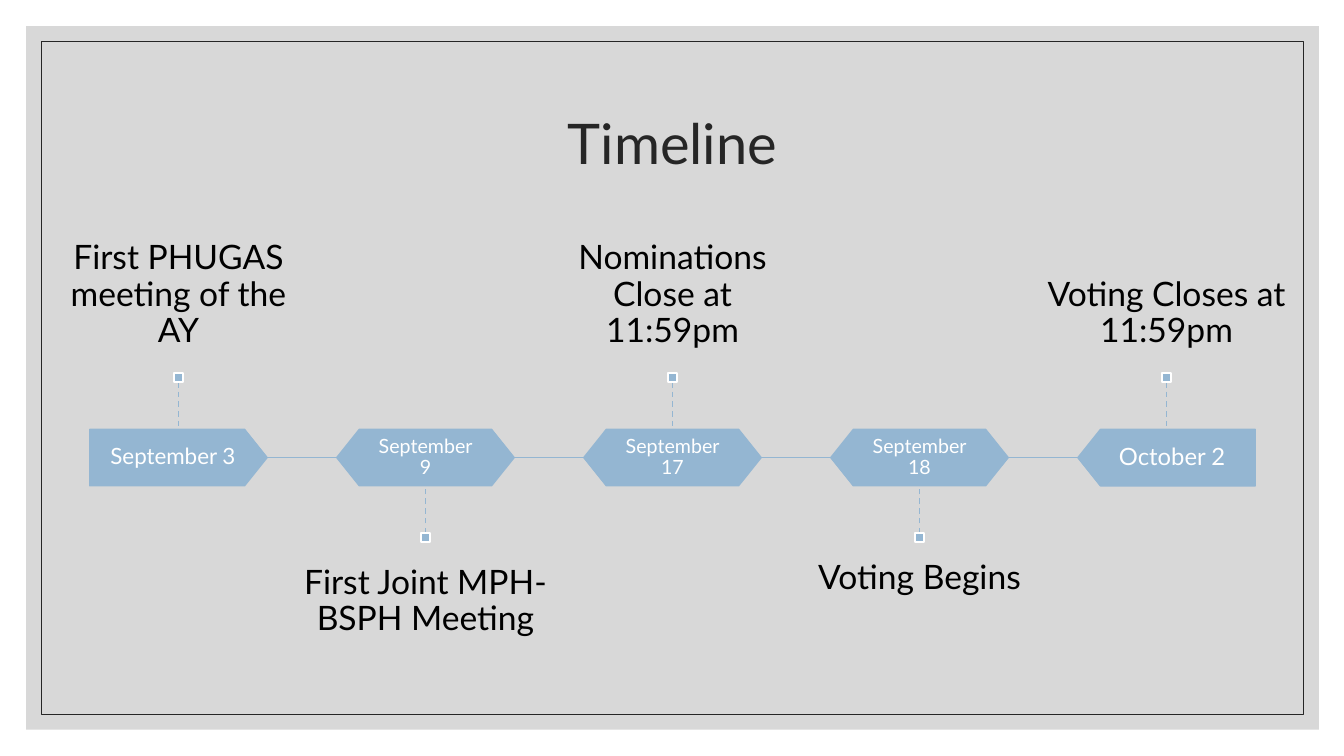
from pptx import Presentation
from pptx.dml.color import RGBColor
from pptx.enum.dml import MSO_LINE
from pptx.enum.shapes import MSO_CONNECTOR, MSO_SHAPE
from pptx.enum.text import MSO_ANCHOR, PP_ALIGN
from pptx.oxml.ns import qn
from pptx.util import Inches, Pt
from lxml import etree

RECT, HEXAGON, PENTAGON = MSO_SHAPE.RECTANGLE, MSO_SHAPE.HEXAGON, MSO_SHAPE.PENTAGON
STRAIGHT, DASH = MSO_CONNECTOR.STRAIGHT, MSO_LINE.DASH
TOP, MIDDLE, BOTTOM = MSO_ANCHOR.TOP, MSO_ANCHOR.MIDDLE, MSO_ANCHOR.BOTTOM
SITE_TOP, SITE_BOTTOM = 0, 2

FONT = "Lato"
BLUE, WHITE, BLACK, DARK, GREY = "94B6D2", "FFFFFF", "000000", "262626", "BFBFBF"

FIRST_X, PITCH = 1.77, 2.45
BOX_W, BOX_H, BOX_TOP = 1.76, 0.56, 4.26
MID_Y, BOX_BOTTOM = BOX_TOP + BOX_H / 2, BOX_TOP + BOX_H
MARKER, STEM = 0.09, 0.47
NOTE_H = 1.5

EVENTS = [
    ("September 3", "First PHUGAS meeting of the AY"),
    ("September 9", "First Joint MPH-BSPH Meeting"),
    ("September 17", "Nominations Close at 11:59pm"),
    ("September 18", "Voting Begins"),
    ("October 2", "Voting Closes at 11:59pm"),
]
# Per kind of box: preset, rotation, text left of centre, top, width, height, inset, size
INNER = (HEXAGON, 0, 0.66, 4.33, 1.32, 0.42, 0.12, 14)
START = (PENTAGON, 0, 0.88, BOX_TOP, 1.65, BOX_H, 0.13, 16)
END = (PENTAGON, 180, 0.77, BOX_TOP, 1.65, BOX_H, 0.14, 17)


def rgb(color):
    return RGBColor.from_string(color)


def add_box(s, kind, x, y, w, h, fill=None, line=None, width=1, alpha=None):
    sp = s.shapes.add_shape(kind, Inches(x), Inches(y), Inches(w), Inches(h))
    sp.shadow.inherit = False
    if fill:
        sp.fill.solid()
        sp.fill.fore_color.rgb = rgb(fill)
    else:
        sp.fill.background()
    if alpha:
        clr = sp.fill._xPr.find(qn("a:solidFill"))[0]
        etree.SubElement(clr, qn("a:alpha")).set("val", str(alpha * 1000))
    if line:
        sp.line.color.rgb = rgb(line)
        sp.line.width = Pt(width)
    else:
        sp.line.fill.background()
    return sp


def add_text(s, text, x, y, w, h, size, color, anchor=MIDDLE, inset=(0.1, 0.05)):
    """Centred text; inset is (left and right, top and bottom)."""
    tf = s.shapes.add_textbox(Inches(x), Inches(y), Inches(w), Inches(h)).text_frame
    side, edge = map(Inches, inset)
    frame = {"word_wrap": True, "vertical_anchor": anchor, "margin_left": side,
             "margin_right": side, "margin_top": edge, "margin_bottom": edge}
    for name, value in frame.items():
        setattr(tf, name, value)
    p = tf.paragraphs[0]
    p.alignment, p.line_spacing = PP_ALIGN.CENTER, 0.9
    r = p.add_run()
    r.text = text
    r.font.name, r.font.size, r.font.color.rgb = FONT, Pt(size), rgb(color)


def add_line(s, x1, y1, x2, y2, dash=None):
    c = s.shapes.add_connector(STRAIGHT, Inches(x1), Inches(y1), Inches(x2), Inches(y2))
    c.line.color.rgb, c.line.width = rgb(BLUE), Pt(1)
    if dash:
        c.line.dash_style = dash
    etree.SubElement(c._element.spPr, qn("a:effectLst"))
    return c


def add_date(s, x, date, style):
    kind, rotation, offset, y, w, h, inset, size = style
    sp = add_box(s, kind, x - BOX_W / 2, BOX_TOP, BOX_W, BOX_H, BLUE, BLUE)
    sp.adjustments[0] = 0.4
    sp.rotation = rotation
    add_text(s, date, x - offset, y, w, h, size, WHITE, inset=(inset, inset))


def add_note(s, x, note, above):
    """Note with a dashed stem and a square marker, above or below the date."""
    if above:
        note_y, anchor, site = 2.2, BOTTOM, SITE_BOTTOM
        box_y, stem_y = BOX_TOP, BOX_TOP - STEM
        marker_y = stem_y - MARKER
    else:
        note_y, anchor, site = 5.38, TOP, SITE_TOP
        box_y, stem_y = BOX_BOTTOM, BOX_BOTTOM + STEM
        marker_y = stem_y
    add_text(s, note, x - PITCH / 2, note_y, PITCH, NOTE_H, 24, BLACK, anchor, (0, 0.23))
    stem = add_line(s, x, stem_y, x, box_y, DASH)
    marker = add_box(s, RECT, x - MARKER / 2, marker_y, MARKER, MARKER, BLUE, WHITE, 1.5)
    stem.begin_connect(marker, site)


def main():
    prs = Presentation()
    prs.slide_width, prs.slide_height = Inches(13.33), Inches(7.5)
    s = prs.slides.add_slide(prs.slide_layouts[6])

    add_box(s, RECT, 0.26, 0.26, 12.82, 6.98, fill=GREY, alpha=60)
    add_box(s, RECT, 0.41, 0.41, 12.52, 6.68, line=DARK, width=0.5)
    add_text(s, "Timeline", 1.17, 0.7, 11, 1.5, 40, DARK)

    last = len(EVENTS) - 1
    styles = {0: START, last: END}
    for i, (date, note) in enumerate(EVENTS):
        x = FIRST_X + i * PITCH
        add_date(s, x, date, styles.get(i, INNER))
        add_note(s, x, note, above=i % 2 == 0)
        if i < last:
            add_line(s, x + BOX_W / 2, MID_Y, x + PITCH - BOX_W / 2, MID_Y)

    prs.save("out.pptx")


if __name__ == "__main__":
    main()
